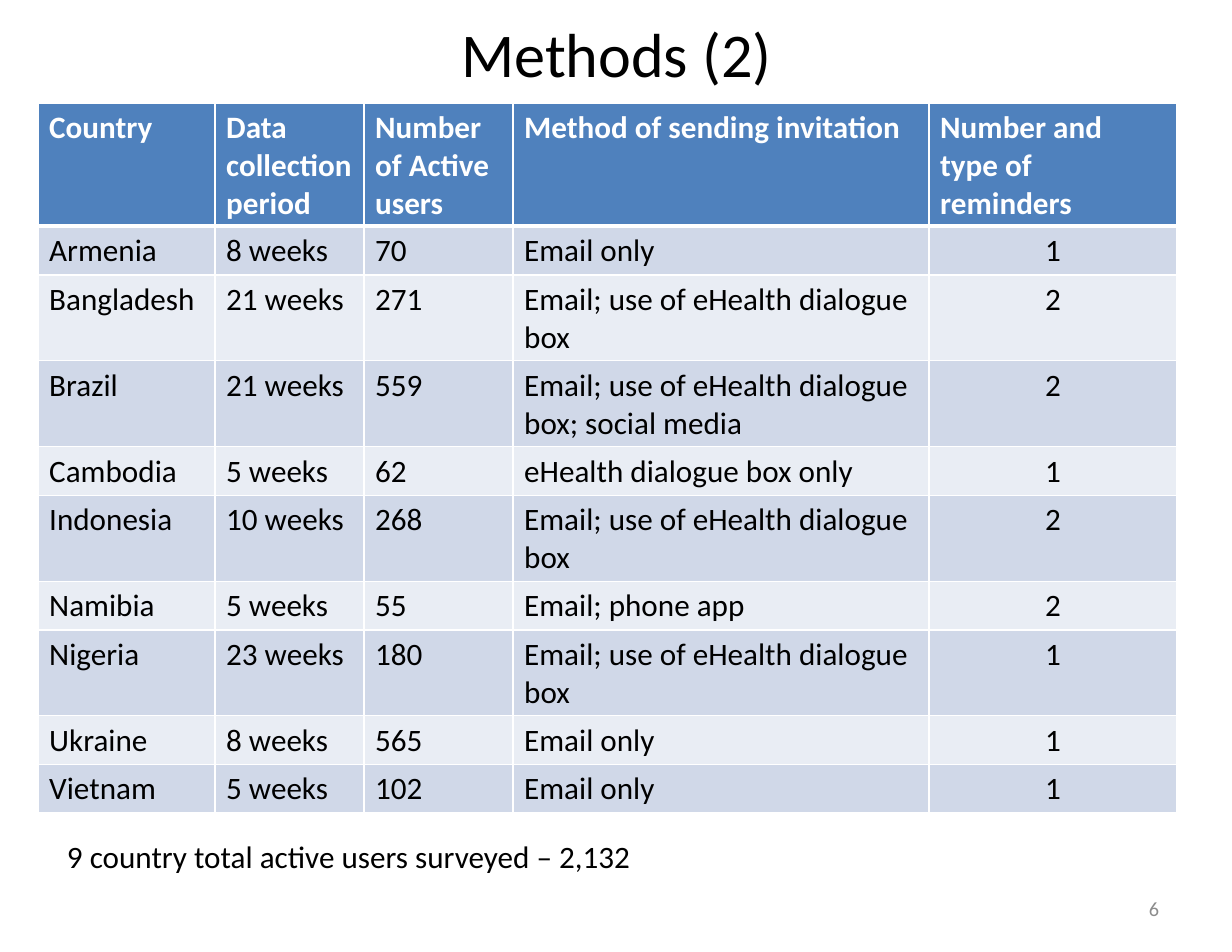
from lxml import etree
from pptx import Presentation
from pptx.dml.color import RGBColor
from pptx.enum.text import MSO_ANCHOR, PP_ALIGN
from pptx.oxml.ns import qn
from pptx.util import Emu, Pt

LEFT, CENTER, RIGHT = PP_ALIGN.LEFT, PP_ALIGN.CENTER, PP_ALIGN.RIGHT
TOP, MIDDLE = MSO_ANCHOR.TOP, MSO_ANCHOR.MIDDLE

PX = 914400 / 112
FONT = "Calibri"
COLORS = {
    "text": "000000",
    "header": "4F81BD",
    "header_text": "FFFFFF",
    "odd_row": "D0D8E8",
    "even_row": "E9EDF4",
    "border": "FFFFFF",
    "page_number": "8C8C8C",
}

TITLE = "Methods (2)"
TOTAL = "9 country total active users surveyed – 2,132"
PAGE_NUMBER = "6"
HEADINGS = (
    "Country",
    "Data collection period",
    "Number of Active users",
    "Method of sending invitation",
    "Number and type of reminders",
)
COUNTRIES = [
    ("Armenia", "8 weeks", "70", "Email only", "1"),
    ("Bangladesh", "21 weeks", "271", "Email; use of eHealth dialogue box", "2"),
    ("Brazil", "21 weeks", "559", "Email; use of eHealth dialogue box; social media", "2"),
    ("Cambodia", "5 weeks", "62", "eHealth dialogue box only", "1"),
    ("Indonesia", "10 weeks", "268", "Email; use of eHealth dialogue box", "2"),
    ("Namibia", "5 weeks", "55", "Email; phone app", "2"),
    ("Nigeria", "23 weeks", "180", "Email; use of eHealth dialogue box", "1"),
    ("Ukraine", "8 weeks", "565", "Email only", "1"),
    ("Vietnam", "5 weeks", "102", "Email only", "1"),
]
COLUMN_WIDTHS = (177, 149, 149, 416, 248)
ROW_HEIGHT = 46
TABLE_LEFT, TABLE_TOP, TABLE_HEIGHT = 38, 103, 709


def px(length):
    return Emu(round(length * PX))


def write(frame, text, size, color, align=LEFT, bold=False):
    paragraph = frame.paragraphs[0]
    paragraph.alignment = align
    run = paragraph.add_run()
    run.text = text
    run.font.name = FONT
    run.font.size = Pt(size)
    run.font.bold = bold
    run.font.color.rgb = RGBColor.from_string(COLORS[color])


def add_text(slide, box, text, size, color, align=LEFT, anchor=TOP, wrap=True, insets=(12, 6)):
    frame = slide.shapes.add_textbox(*map(px, box)).text_frame
    frame.word_wrap = wrap
    frame.vertical_anchor = anchor
    frame.margin_left = frame.margin_right = px(insets[0])
    frame.margin_top = frame.margin_bottom = px(insets[1])
    write(frame, text, size, color, align)


def set_borders(cell, bottom_width):
    properties = cell._tc.get_or_add_tcPr()
    widths = {"a:lnL": 1, "a:lnR": 1, "a:lnT": 1, "a:lnB": bottom_width}
    for position, (side, width) in enumerate(widths.items()):
        line = etree.Element(qn(side), w=str(Pt(width)))
        fill = etree.SubElement(line, qn("a:solidFill"))
        etree.SubElement(fill, qn("a:srgbClr"), val=COLORS["border"])
        properties.insert(position, line)


def add_countries(slide):
    rows = [HEADINGS, *COUNTRIES]
    holder = slide.shapes.add_table(
        len(rows), len(HEADINGS), px(TABLE_LEFT), px(TABLE_TOP),
        px(sum(COLUMN_WIDTHS)), px(TABLE_HEIGHT),
    )
    table = holder.table
    for column, width in zip(table.columns, COLUMN_WIDTHS):
        column.width = px(width)
    for r, values in enumerate(rows):
        table.rows[r].height = px(ROW_HEIGHT)
        is_header = r == 0
        band = "header" if is_header else "odd_row" if r % 2 else "even_row"
        for c, value in enumerate(values):
            cell = table.cell(r, c)
            cell.fill.solid()
            cell.fill.fore_color.rgb = RGBColor.from_string(COLORS[band])
            is_reminder = not is_header and c == len(HEADINGS) - 1
            write(
                cell.text_frame, value, 20,
                "header_text" if is_header else "text",
                CENTER if is_reminder else LEFT, is_header,
            )
            set_borders(cell, 3 if is_header else 1)
    holder.height = px(TABLE_HEIGHT)


def main():
    deck = Presentation()
    deck.slide_width, deck.slide_height = px(1232), px(952)
    slide = deck.slides.add_slide(deck.slide_layouts[6])
    add_text(slide, (62, 9, 1109, 67), TITLE, 40, "text", CENTER)
    add_countries(slide)
    add_text(slide, (56, 831, 591, 49), TOTAL, 20, "text", wrap=False, insets=(11, 6))
    add_text(slide, (883, 883, 288, 50), PAGE_NUMBER, 13, "page_number", RIGHT, MIDDLE)
    deck.save("out.pptx")


if __name__ == "__main__":
    main()
